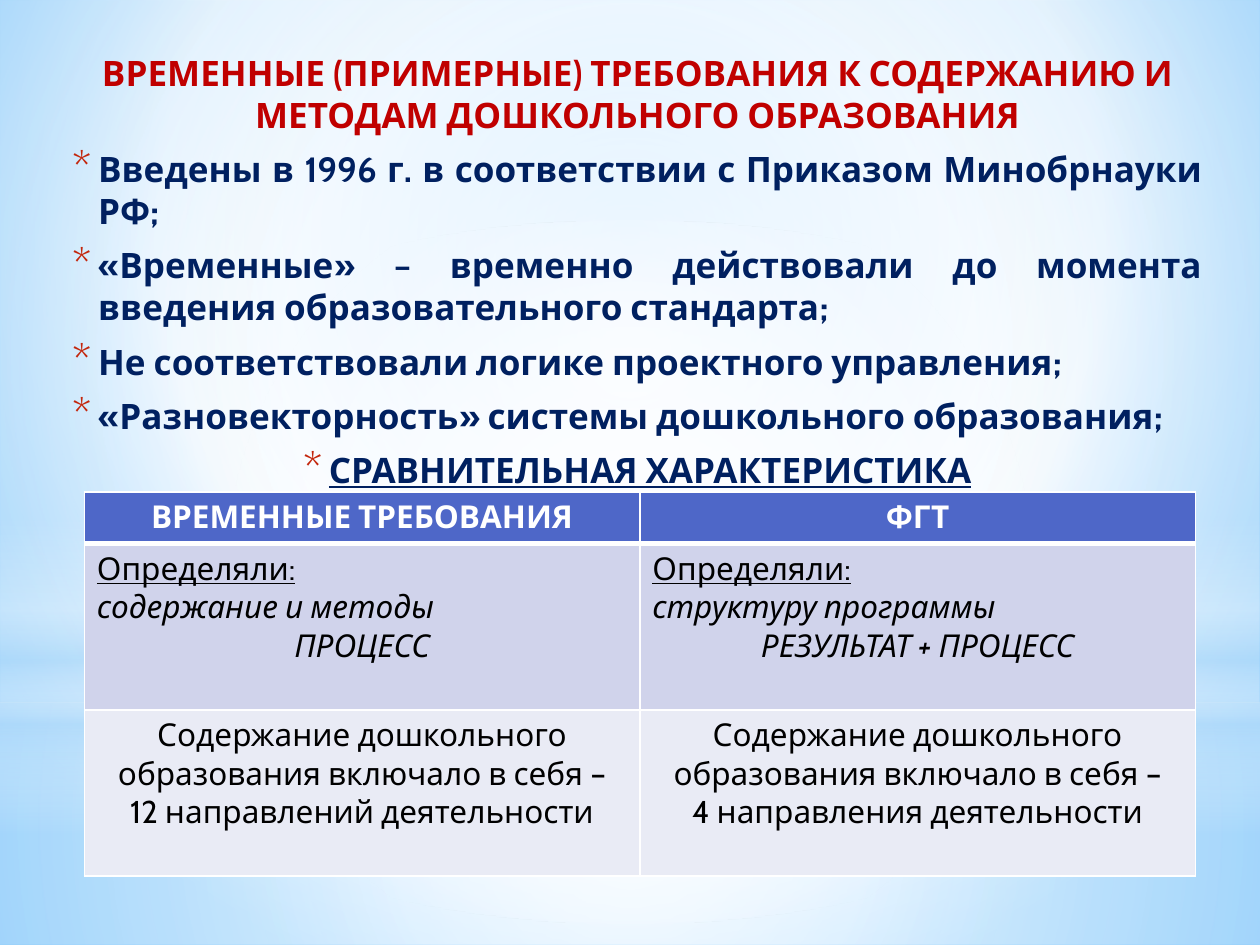
from dataclasses import dataclass

from lxml import etree
from pptx import Presentation
from pptx.dml.color import RGBColor
from pptx.enum.shapes import MSO_SHAPE
from pptx.enum.text import PP_ALIGN
from pptx.oxml.ns import qn
from pptx.util import Cm, Pt

LEFT, CENTER, JUSTIFY = PP_ALIGN.LEFT, PP_ALIGN.CENTER, PP_ALIGN.JUSTIFY
RECTANGLE, OVAL = MSO_SHAPE.RECTANGLE, MSO_SHAPE.OVAL


@dataclass(frozen=True)
class Theme:
    font: str = "Cabin"
    body_size: int = 20
    table_size: int = 18
    heading: str = "C00000"
    body: str = "002060"
    bullet: str = "C3260C"
    white: str = "FFFFFF"
    black: str = "000000"
    header_fill: str = "4E67C8"
    row_fills: tuple = ("D0D3EB", "E9EBF5")
    sky: str = "9ED5FF"
    deep_sky: str = "5BB9FF"
    haze: str = "B4DCFA"


THEME = Theme()
MIDDLE = (50, 50, 50, 50)

HEADING = "ВРЕМЕННЫЕ (ПРИМЕРНЫЕ) ТРЕБОВАНИЯ К СОДЕРЖАНИЮ И МЕТОДАМ ДОШКОЛЬНОГО ОБРАЗОВАНИЯ"
POINTS = [
    "Введены в 1996 г. в соответствии с Приказом Минобрнауки РФ;",
    "«Временные» – временно действовали до момента введения образовательного стандарта;",
    "Не соответствовали логике проектного управления;",
    "«Разновекторность» системы дошкольного образования;",
]
TABLE_TITLE = "СРАВНИТЕЛЬНАЯ ХАРАКТЕРИСТИКА"
CONTENT = "Содержание дошкольного образования включало в себя –"
COMPARISON = [
    ("ВРЕМЕННЫЕ ТРЕБОВАНИЯ", "содержание и методы", "ПРОЦЕСС", "12 направлений деятельности"),
    ("ФГТ", "структуру программы", "РЕЗУЛЬТАТ + ПРОЦЕСС", "4 направления деятельности"),
]


def add_child(parent, tag, **attributes):
    child = etree.SubElement(parent, qn(tag))
    for key, value in attributes.items():
        child.set(key, str(value))
    return child


def paint_gradient(fill, owner, stops, focus=None):
    fill.gradient()
    gradient = owner.find(".//" + qn("a:gradFill"))
    for child in list(gradient):
        gradient.remove(child)
    stop_list = add_child(gradient, "a:gsLst")
    for position, color, opacity in stops:
        stop = add_child(stop_list, "a:gs", pos=position * 1000)
        shade = add_child(stop, "a:srgbClr", val=color)
        if opacity < 100:
            add_child(shade, "a:alpha", val=opacity * 1000)
    if focus:
        path = add_child(gradient, "a:path", path="circle")
        sides = {side: value * 1000 for side, value in zip("ltrb", focus)}
        add_child(path, "a:fillToRect", **sides)
    else:
        add_child(gradient, "a:lin", ang=90 * 60000, scaled=0)


def add_run(paragraph, text, size, color, bold=False, italic=False, underline=False):
    run = paragraph.add_run()
    run.text = text
    font = run.font
    font.name, font.size = THEME.font, Pt(size)
    font.color.rgb = RGBColor.from_string(color)
    font.bold, font.italic, font.underline = bold, italic, underline


def next_paragraph(frame, index, alignment):
    paragraph = frame.add_paragraph() if index else frame.paragraphs[0]
    paragraph.alignment = alignment
    return paragraph


def add_backdrop(slide, left, top, width, height):
    white, haze = THEME.white, THEME.haze
    paint_gradient(slide.background.fill, slide.element,
                   [(0, THEME.sky, 100), (60, white, 100), (100, THEME.deep_sky, 100)],
                   (20, 10, 20, 60))
    horizon = Cm(14.17)
    layers = [
        (RECTANGLE, horizon, height - horizon,
         [(0, white, 91), (37, white, 76), (100, haze, 79)], MIDDLE),
        (RECTANGLE, 0, horizon,
         [(0, white, 89), (48, white, 62), (100, haze, 79)], MIDDLE),
        (RECTANGLE, Cm(10.46), Cm(6.35),
         [(0, white, 0), (29, white, 30), (45, haze, 40),
          (55, white, 26), (65, haze, 60), (100, white, 0)], None),
        (OVAL, Cm(4.45), horizon, [(0, white, 100), (56, white, 0)], MIDDLE),
    ]
    for preset, offset, depth, stops, focus in layers:
        layer = slide.shapes.add_shape(preset, left, top + offset, width, depth)
        layer.shadow.inherit = False
        layer.line.fill.background()
        paint_gradient(layer.fill, layer.element, stops, focus)


def set_bullet(properties):
    properties.set("marL", str(Cm(0.64)))
    properties.set("indent", str(-Cm(0.51)))
    color = add_child(properties, "a:buClr")
    add_child(color, "a:srgbClr", val=THEME.bullet)
    add_child(properties, "a:buSzPct", val=130000)
    add_child(properties, "a:buFont", typeface=THEME.font)
    add_child(properties, "a:buChar", char="*")


def add_requirements(slide, left, top, width, height):
    frame = slide.shapes.add_textbox(left, top, width, height).text_frame
    frame.word_wrap = True
    lines = [(HEADING, CENTER, THEME.heading, False, False)]
    lines += [(point, JUSTIFY, THEME.body, True, False) for point in POINTS]
    lines.append((TABLE_TITLE, CENTER, THEME.body, True, True))
    for index, (text, alignment, color, bulleted, underline) in enumerate(lines):
        paragraph = next_paragraph(frame, index, alignment)
        paragraph.space_before, paragraph.space_after = Pt(4), Pt(3)
        add_run(paragraph, text, THEME.body_size, color, bold=True, underline=underline)
        properties = paragraph._p.get_or_add_pPr()
        if bulleted:
            set_bullet(properties)
        else:
            properties.set("marL", str(Cm(0.13)))


def style_cell(cell, fill, bottom_width):
    properties = cell._tc.get_or_add_tcPr()
    for side, width in (("L", 1), ("R", 1), ("T", 1), ("B", bottom_width)):
        border = add_child(properties, "a:ln" + side, w=Pt(width))
        add_child(add_child(border, "a:solidFill"), "a:srgbClr", val=THEME.white)
    cell.fill.solid()
    cell.fill.fore_color.rgb = RGBColor.from_string(fill)


def add_comparison(slide, left, top, width, row_heights):
    table = slide.shapes.add_table(len(row_heights), len(COMPARISON), left, top,
                                   width, sum(row_heights)).table
    for row, height in zip(table.rows, row_heights):
        row.height = height
    fills = (THEME.header_fill, *THEME.row_fills)
    for column, (title, subject, focus, directions) in enumerate(COMPARISON):
        table.columns[column].width = width // len(COMPARISON)
        cells = [
            [(title, CENTER, {"bold": True})],
            [("Определяли:", LEFT, {"underline": True}),
             (subject, LEFT, {"italic": True}),
             (focus, CENTER, {"italic": True})],
            [(CONTENT, CENTER, {}), (directions, CENTER, {})],
        ]
        for row, lines in enumerate(cells):
            cell = table.cell(row, column)
            style_cell(cell, fills[row], 1 if row else 3)
            color = THEME.black if row else THEME.white
            for index, (text, alignment, emphasis) in enumerate(lines):
                paragraph = next_paragraph(cell.text_frame, index, alignment)
                add_run(paragraph, text, THEME.table_size, color, **emphasis)


def main():
    deck = Presentation()
    deck.slide_width, deck.slide_height = Cm(25.4), Cm(19.05)
    slide = deck.slides.add_slide(deck.slide_layouts[6])
    add_backdrop(slide, 0, 0, deck.slide_width, deck.slide_height)
    add_requirements(slide, Cm(1.09), Cm(0.91), Cm(23.39), Cm(15.8))
    add_comparison(slide, Cm(1.7), Cm(9.92), Cm(22.4), (Cm(1.04), Cm(3.35), Cm(3.35)))
    deck.save("out.pptx")


if __name__ == "__main__":
    main()
